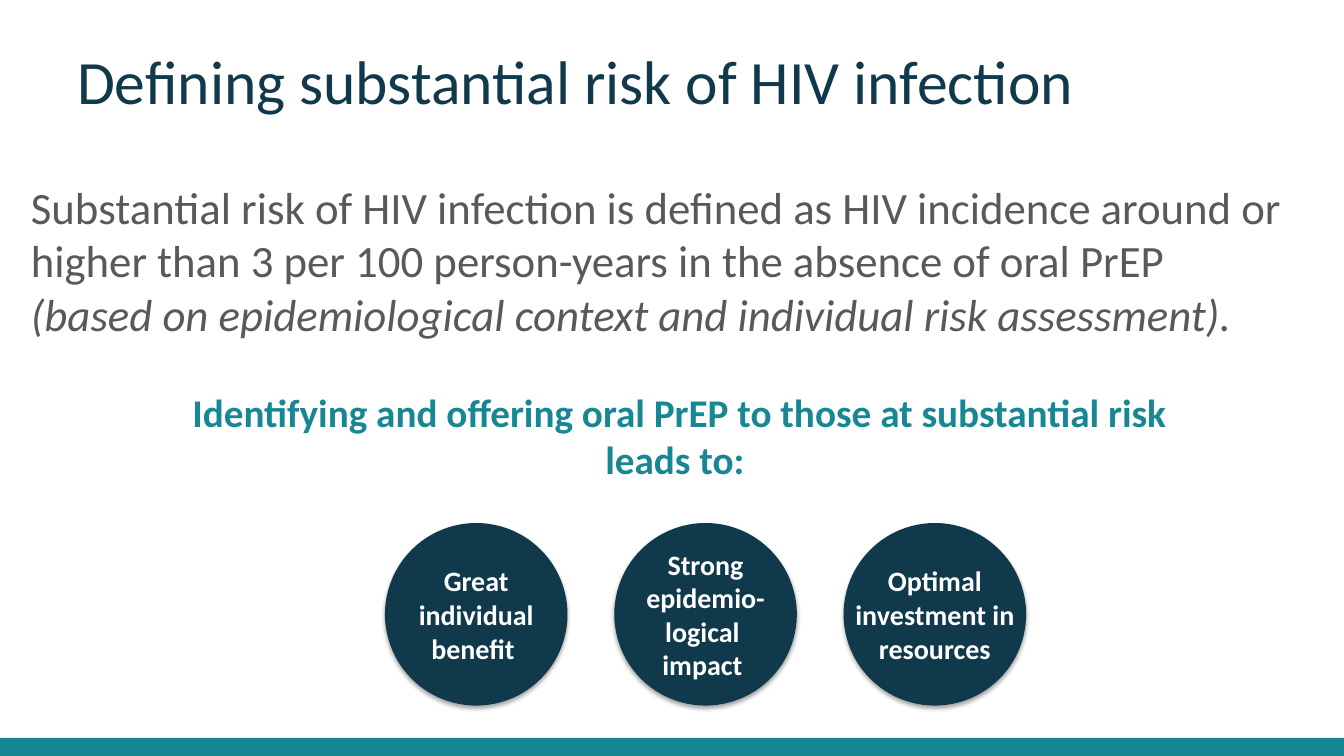
from dataclasses import dataclass

from lxml.etree import SubElement
from pptx import Presentation
from pptx.dml.color import RGBColor
from pptx.enum.shapes import MSO_SHAPE
from pptx.enum.text import MSO_ANCHOR, PP_ALIGN
from pptx.oxml.ns import qn
from pptx.util import Pt


@dataclass(frozen=True)
class Theme:
    font: str = "Calibri"
    navy: str = "10394B"
    teal: str = "178793"
    grey: str = "595959"
    white: str = "FFFFFF"
    shadow: str = "000000"
    title_size: int = 44
    body_size: int = 32
    lead_size: int = 28
    benefit_size: int = 20


THEME = Theme()
SLIDE_WIDTH, SLIDE_HEIGHT = 960, 540
CIRCLE_LEFT, CIRCLE_TOP, CIRCLE_SIZE, CIRCLE_STEP = 275, 373.6, 130.4, 163.8
BENEFIT_LINE, BOX_PADDING = 24.3, 7.2

# Each benefit: text, with a newline for a forced break, and its line count
BENEFITS = [
    ("Great individual benefit ", 3),
    ("Strong epidemio-logical \nimpact ", 4),
    ("Optimal investment in resources", 3),
]


def add_text(slide, box, runs, size, color, bold=False,
             align=PP_ALIGN.LEFT, anchor=MSO_ANCHOR.TOP):
    """Add one paragraph; runs are pairs of text and italic flag."""
    shape = slide.shapes.add_textbox(*map(Pt, box))
    frame = shape.text_frame
    frame.word_wrap = True
    frame.vertical_anchor = anchor
    paragraph = frame.paragraphs[0]
    paragraph.alignment = align
    for text, italic in runs:
        for number, line in enumerate(text.split("\n")):
            if number:
                paragraph.add_line_break()
            run = paragraph.add_run()
            run.text = line
            run.font.name = THEME.font
            run.font.size = Pt(size)
            run.font.bold = bold
            run.font.italic = italic
            run.font.color.rgb = RGBColor.from_string(color)
    return paragraph


def add_filled_shape(slide, preset, box, color):
    shape = slide.shapes.add_shape(preset, *map(Pt, box))
    shape.shadow.inherit = False
    shape.fill.solid()
    shape.fill.fore_color.rgb = RGBColor.from_string(color)
    shape.line.fill.background()
    return shape


def add_soft_shadow(shape):
    effects = shape.element.spPr.find(qn("a:effectLst"))
    shadow = SubElement(effects, qn("a:outerShdw"), blurRad=str(Pt(3.1)),
                        dist=str(Pt(1.8)), dir="5400000", rotWithShape="0")
    color = SubElement(shadow, qn("a:srgbClr"), val=THEME.shadow)
    SubElement(color, qn("a:alpha"), val="35000")


def add_benefit_circle(slide, left):
    box = (left, CIRCLE_TOP, CIRCLE_SIZE, CIRCLE_SIZE)
    add_soft_shadow(add_filled_shape(slide, MSO_SHAPE.OVAL, box, THEME.navy))


def add_benefit_label(slide, left, text, line_count):
    height = line_count * BENEFIT_LINE + BOX_PADDING
    top = CIRCLE_TOP + (CIRCLE_SIZE - height) / 2
    add_text(slide, (left, top, CIRCLE_SIZE, height), [(text, False)],
             THEME.benefit_size, THEME.white, bold=True,
             align=PP_ALIGN.CENTER, anchor=MSO_ANCHOR.MIDDLE)


def main():
    presentation = Presentation()
    presentation.slide_width = Pt(SLIDE_WIDTH)
    presentation.slide_height = Pt(SLIDE_HEIGHT)
    slide = presentation.slides.add_slide(presentation.slide_layouts[6])

    # Footer band
    add_filled_shape(slide, MSO_SHAPE.RECTANGLE,
                     (0, 527, SLIDE_WIDTH, SLIDE_HEIGHT - 527), THEME.teal)

    # Title
    title = add_text(slide, (48, 35.3, 864, 76.3),
                     [("Defining substantial risk of HIV infection", False)],
                     THEME.title_size, THEME.navy)
    title.line_spacing = Pt(44.8)

    # Definition
    add_text(slide, (15, 124.5, 914.4, 124),
             [("Substantial risk of HIV infection is defined as HIV incidence "
               "around or higher than 3 per 100 person-years in the absence "
               "of oral PrEP ", False),
              ("(based on epidemiological context and individual risk "
               "assessment).", True)],
             THEME.body_size, THEME.grey)

    # Lead-in to the benefits
    add_text(slide, (100, 273.6, 770.4, 75),
             [("Identifying and offering oral PrEP to those at substantial "
               "risk leads to: ", False)],
             THEME.lead_size, THEME.teal, bold=True, align=PP_ALIGN.CENTER)

    # Benefits in evenly spaced circles
    for index, (text, line_count) in enumerate(BENEFITS):
        left = CIRCLE_LEFT + index * CIRCLE_STEP
        add_benefit_circle(slide, left)
        add_benefit_label(slide, left, text, line_count)

    presentation.save("out.pptx")


if __name__ == "__main__":
    main()
